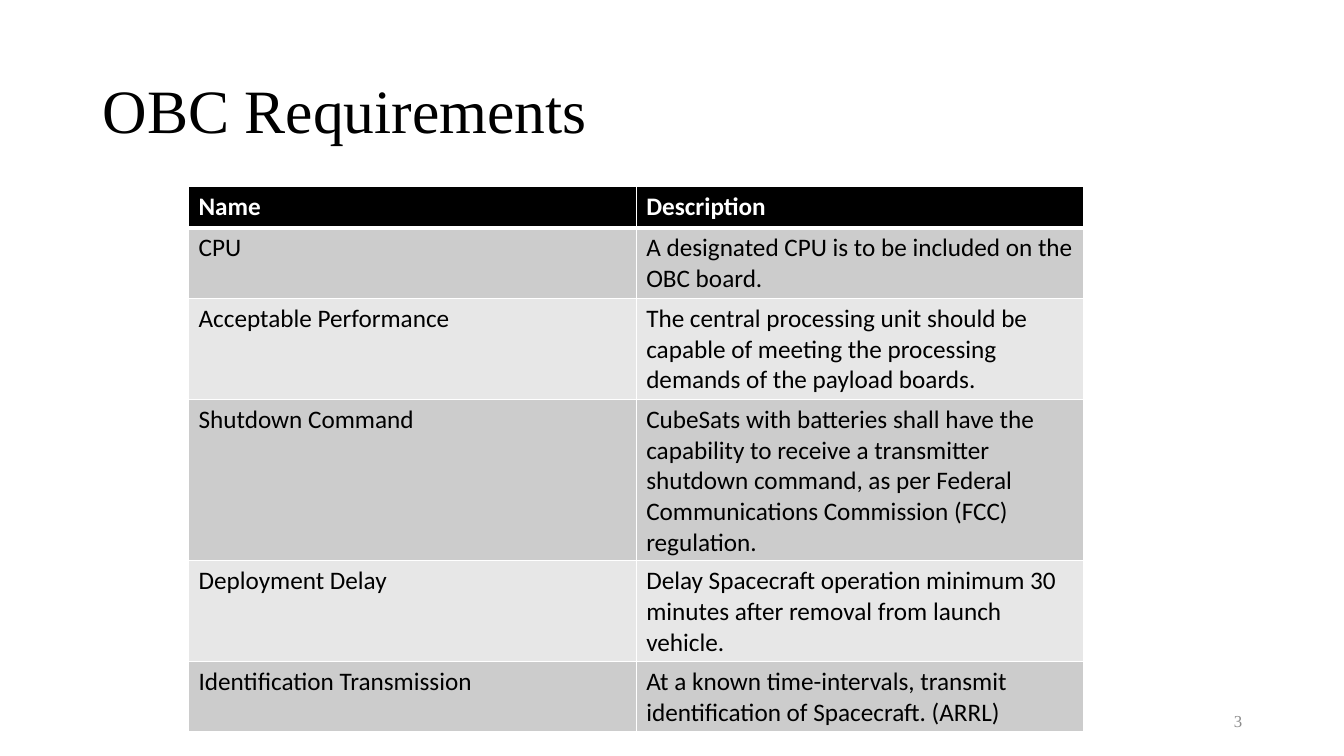
from lxml import etree
from pptx import Presentation
from pptx.dml.color import RGBColor
from pptx.enum import text
from pptx.oxml import ns
from pptx.util import Inches, Pt

TITLE = "OBC Requirements"
PAGE_NUMBER = "3"
REQUIREMENTS = [
    ("Name", "Description"),
    ("CPU", "A designated CPU is to be included on the OBC board."),
    ("Acceptable Performance",
     "The central processing unit should be capable of meeting the processing "
     "demands of the payload boards."),
    ("Shutdown Command",
     "CubeSats with batteries shall have the capability to receive a transmitter "
     "shutdown command, as per Federal Communications Commission (FCC) regulation."),
    ("Deployment Delay",
     "Delay Spacecraft operation minimum 30 minutes after removal from launch vehicle."),
    ("Identification Transmission",
     "At a known time-intervals, transmit identification of Spacecraft. (ARRL)"),
]
BLACK, WHITE, GREY = "000000", "FFFFFF", "8C8C8C"
BANDS = ("E7E7E7", "CCCCCC")
SERIF, SANS = "Times New Roman", "Calibri"
TABLE_LEFT, TABLE_TOP, TABLE_HEIGHT = 1.87, 1.85, 5.41
COLUMN_WIDTH, ROW_HEIGHT = 4.44, 0.41


def color(value):
    return RGBColor.from_string(value)


def add_run(paragraph, content, size, font, fill, bold=False):
    run = paragraph.add_run()
    run.text = content
    run.font.size = Pt(size)
    run.font.name = font
    run.font.bold = bold
    run.font.color.rgb = color(fill)


def add_label(slide, box, content, size, fill):
    """Add a vertically centred serif text box and return its paragraph."""
    frame = slide.shapes.add_textbox(*map(Inches, box)).text_frame
    frame.word_wrap = True
    frame.vertical_anchor = text.MSO_ANCHOR.MIDDLE
    paragraph = frame.paragraphs[0]
    add_run(paragraph, content, size, SERIF, fill)
    return paragraph


def set_borders(cell, widths):
    """Draw white borders, with widths in points keyed by side: L, R, T, B."""
    properties = cell._tc.get_or_add_tcPr()
    for side, width in widths.items():
        line = etree.SubElement(properties, ns.qn(f"a:ln{side}"), w=str(Pt(width)))
        fill = etree.SubElement(line, ns.qn("a:solidFill"))
        etree.SubElement(fill, ns.qn("a:srgbClr"), val=WHITE)


def add_requirements(slide):
    rows, columns = len(REQUIREMENTS), len(REQUIREMENTS[0])
    frame = slide.shapes.add_table(
        rows, columns, Inches(TABLE_LEFT), Inches(TABLE_TOP),
        Inches(COLUMN_WIDTH * columns), Inches(ROW_HEIGHT * rows))
    frame.height = Inches(TABLE_HEIGHT)
    for row, values in enumerate(REQUIREMENTS):
        header = row == 0
        top = 3 if row == 1 else 1
        bottom = 3 if header else 1
        for column, value in enumerate(values):
            cell = frame.table.cell(row, column)
            set_borders(cell, {"L": 1, "R": 1, "T": top, "B": bottom})
            cell.fill.solid()
            cell.fill.fore_color.rgb = color(BLACK if header else BANDS[row % 2])
            add_run(cell.text_frame.paragraphs[0], value, 18, SANS,
                    WHITE if header else BLACK, header)


def main():
    presentation = Presentation()
    presentation.slide_width = Inches(13.33)
    presentation.slide_height = Inches(7.5)
    slide = presentation.slides.add_slide(presentation.slide_layouts[6])

    title = add_label(slide, (0.92, 0.4, 11.5, 1.45), TITLE, 44, BLACK)
    title.line_spacing = 0.9
    number = add_label(slide, (9.42, 6.95, 3, 0.4), PAGE_NUMBER, 12, GREY)
    number.alignment = text.PP_ALIGN.RIGHT
    add_requirements(slide)

    presentation.save("out.pptx")


if __name__ == "__main__":
    main()
